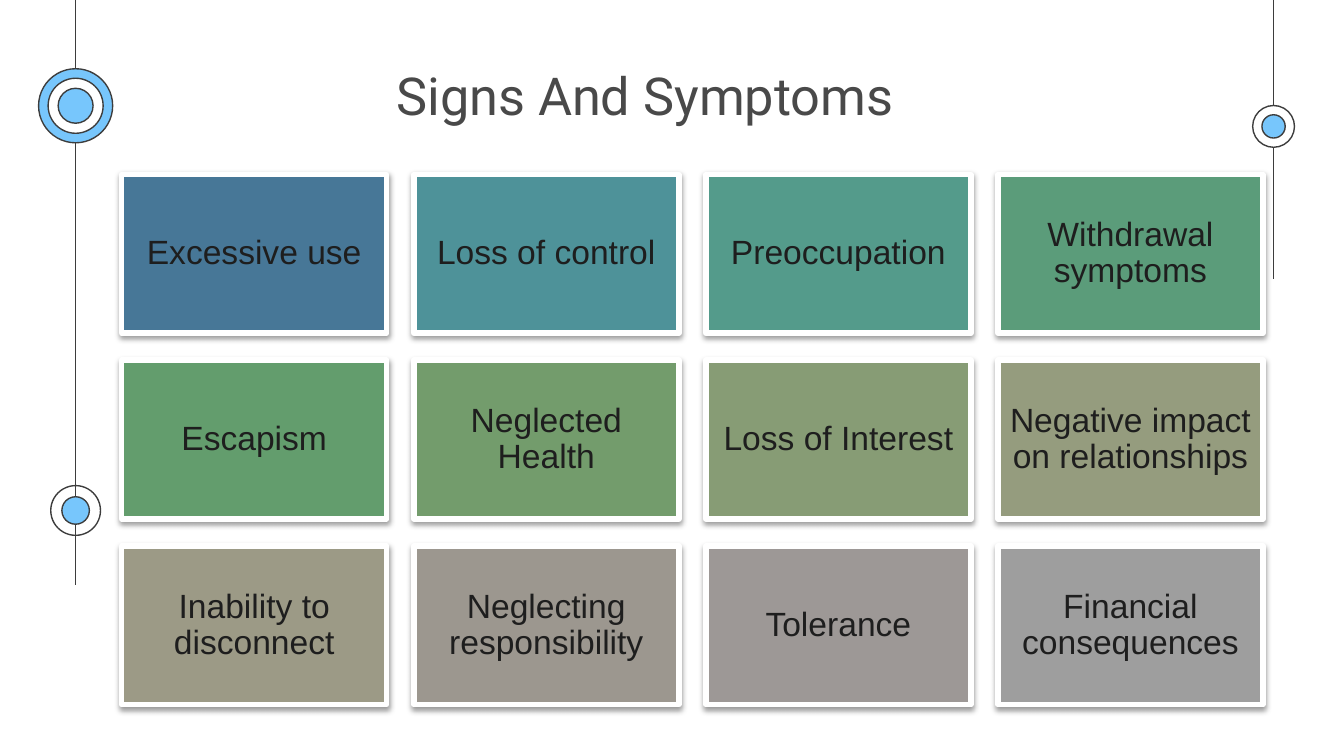
from lxml.etree import SubElement
from pptx import Presentation
from pptx.dml.color import RGBColor
from pptx.enum.shapes import MSO_CONNECTOR, MSO_SHAPE
from pptx.enum.text import MSO_ANCHOR, MSO_AUTO_SIZE, PP_ALIGN
from pptx.oxml.ns import qn
from pptx.util import Cm, Pt

SYMPTOMS = [
    ("Excessive use", "477797"),
    ("Loss of control", "4E9299"),
    ("Preoccupation", "549B8B"),
    ("Withdrawal symptoms", "5B9C7A"),
    ("Escapism", "639D6D"),
    ("Neglected Health", "739C6C"),
    ("Loss of Interest", "879C75"),
    ("Negative impact on relationships", "959C7E"),
    ("Inability to disconnect", "9C9A86"),
    ("Neglecting responsibility", "9C978F"),
    ("Tolerance", "9D9896"),
    ("Financial consequences", "9E9E9E"),
]
COLUMNS = 4
GRID_LEFT, GRID_TOP = 2.3, 3.3
STEP_X, STEP_Y = 5.52, 3.51
LEFT_AXIS, RIGHT_AXIS = 1.43, 24.07


def color(value):
    return RGBColor.from_string(value)


def write(shape, text, *, size, font, ink, inset, right_inset=None,
          anchor=MSO_ANCHOR.MIDDLE, spacing=1.0):
    frame = shape.text_frame
    frame.word_wrap = True
    frame.auto_size = MSO_AUTO_SIZE.NONE
    frame.vertical_anchor = anchor
    frame.margin_left = frame.margin_top = frame.margin_bottom = Cm(inset)
    frame.margin_right = Cm(inset if right_inset is None else right_inset)
    paragraph = frame.paragraphs[0]
    paragraph.alignment = PP_ALIGN.CENTER
    paragraph.line_spacing = spacing
    run = paragraph.add_run()
    run.text = text
    run.font.size = Pt(size)
    run.font.name = font
    run.font.color.rgb = color(ink)


class SymptomSlide:
    outline = "3D3D3D"
    accent = "77C6FC"
    white = "FFFFFF"

    def __init__(self, slide):
        self.slide = slide

    def title(self, text):
        heading = self.slide.shapes.title
        heading.left, heading.top = Cm(4.72), Cm(0.94)
        heading.width, heading.height = Cm(15.49), Cm(1.65)
        write(heading, text, size=28, font="Roboto", ink="494949",
              inset=0.25, right_inset=0.81, anchor=MSO_ANCHOR.TOP)

    def axis(self, x, bottom):
        axis = self.slide.shapes.add_connector(
            MSO_CONNECTOR.STRAIGHT, Cm(x), Cm(0), Cm(x), Cm(bottom))
        axis.line.color.rgb = color(self.outline)
        axis.line.width = Pt(0.75)
        SubElement(axis._element.spPr, qn("a:effectLst"))

    def disc(self, x, y, diameter, fill=None):
        disc = self.slide.shapes.add_shape(
            MSO_SHAPE.OVAL, Cm(x - diameter / 2), Cm(y - diameter / 2),
            Cm(diameter), Cm(diameter))
        disc.shadow.inherit = False
        if fill:
            disc.fill.solid()
            disc.fill.fore_color.rgb = color(fill)
        else:
            disc.fill.background()
        disc.line.color.rgb = color(self.outline)
        disc.line.width = Pt(0.75)

    def target(self, x, y, rings):
        for diameter, fill in rings:
            self.disc(x, y, diameter, fill)

    def card(self, x, y, text, fill):
        card = self.slide.shapes.add_shape(
            MSO_SHAPE.RECTANGLE, Cm(x), Cm(y), Cm(5.01), Cm(3))
        card.fill.solid()
        card.fill.fore_color.rgb = color(fill)
        card.line.color.rgb = color(self.white)
        card.line.width = Pt(3)
        self.drop_shadow(card)
        write(card, text, size=18, font="Arial", ink="1E1E1E",
              inset=0.18, spacing=0.9)

    def drop_shadow(self, shape):
        shape.shadow.inherit = False
        effects = shape._element.spPr.find(qn("a:effectLst"))
        shadow = SubElement(effects, qn("a:outerShdw"), blurRad=str(Pt(3.1)),
                            dist=str(Pt(1.6)), dir="5400000", rotWithShape="0")
        tint = SubElement(shadow, qn("a:srgbClr"), val="000000")
        SubElement(tint, qn("a:alpha"), val="38000")


def main():
    presentation = Presentation()
    presentation.slide_width = Cm(25.4)
    presentation.slide_height = Cm(14.29)
    page = SymptomSlide(
        presentation.slides.add_slide(presentation.slide_layouts[5]))

    page.axis(LEFT_AXIS, 11.05)
    page.axis(RIGHT_AXIS, 5.28)
    page.target(LEFT_AXIS, 9.65, [(0.94, None), (0.52, page.accent)])
    page.target(RIGHT_AXIS, 2.39, [(0.79, page.white), (0.44, page.accent)])
    page.target(LEFT_AXIS, 2, [(1.4, page.accent), (1.04, page.white),
                               (0.66, page.accent)])
    page.title("Signs And Symptoms")
    for index, (symptom, fill) in enumerate(SYMPTOMS):
        row, column = divmod(index, COLUMNS)
        page.card(GRID_LEFT + column * STEP_X, GRID_TOP + row * STEP_Y,
                  symptom, fill)

    presentation.save("out.pptx")


if __name__ == "__main__":
    main()
